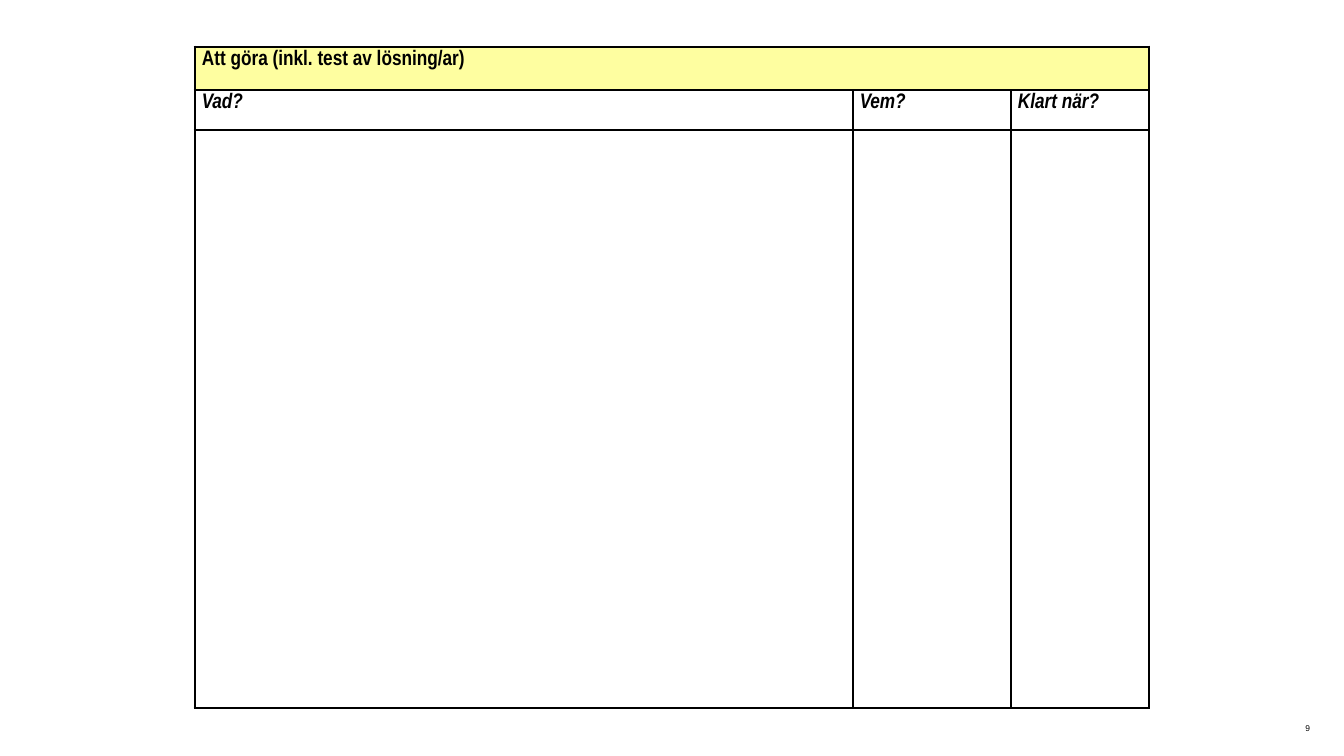
from lxml.etree import SubElement
from pptx import Presentation
from pptx.dml.color import RGBColor
from pptx.enum.text import PP_ALIGN
from pptx.oxml.ns import qn
from pptx.util import Pt

PX = 914400 / 100.8
SIZE = (1344, 756)
HEAD = "Att göra (inkl. test av lösning/ar)"
LABELS = ["Vad?", "Vem?", "Klart när?"]
COLS = [658, 158, 138]
ROWS = [43, 40, 578]
LEFT, TOP = 195, 47
NUM = ("9", (1243, 723, 67, 10))
BLACK, WHITE, CREAM = "000000", "FFFFFF", "FEFEA0"
THICK, THIN = 2.25, 1


def px(n):
    return round(n * PX)


def color(code):
    return RGBColor.from_string(code)


def style(font, name, size, bold=False, italic=False):
    font.name, font.size = name, Pt(size)
    font.bold, font.italic = bold, italic
    font.color.rgb = color(BLACK)


def border(cell, side, width):
    props = cell._tc.get_or_add_tcPr()
    line = SubElement(props, qn("a:ln" + side), w=str(Pt(width)))
    fill = SubElement(line, qn("a:solidFill"))
    SubElement(fill, qn("a:srgbClr"), val=BLACK)


def add_plan(slide):
    frame = slide.shapes.add_table(len(ROWS), len(COLS), px(LEFT), px(TOP),
                                   px(sum(COLS)), px(sum(ROWS)))
    table = frame.table
    table.first_row = table.horz_banding = False
    for col, width in zip(table.columns, COLS):
        col.width = px(width)
    for row, height in zip(table.rows, ROWS):
        row.height = px(height)
    texts = [[HEAD, "", ""], LABELS, ["", "", ""]]
    table.cell(0, 0).merge(table.cell(0, len(COLS) - 1))
    for r, line in enumerate(texts):
        for c, text in enumerate(line):
            cell = table.cell(r, c)
            cell.margin_left = cell.margin_right = px(7)
            cell.margin_top = cell.margin_bottom = px(3)
            outer = {"L": r == 0 or c == 0,
                     "R": r == 0 or c == len(COLS) - 1,
                     "T": r == 0,
                     "B": r == len(ROWS) - 1}
            for side, edge in outer.items():
                border(cell, side, THICK if edge else THIN)
            cell.fill.solid()
            cell.fill.fore_color.rgb = color(WHITE if r else CREAM)
            if text:
                cell.text_frame.text = text
                run = cell.text_frame.paragraphs[0].runs[0]
                style(run.font, "Arial Narrow", 15, True, r == 1)


def add_number(slide):
    text, place = NUM
    frame = slide.shapes.add_textbox(*map(px, place)).text_frame
    frame.margin_left = frame.margin_right = 0
    frame.margin_top = frame.margin_bottom = 0
    frame.word_wrap = True
    frame.text = text
    para = frame.paragraphs[0]
    para.alignment = PP_ALIGN.RIGHT
    style(para.runs[0].font, "Arial", 6)


def main():
    deck = Presentation()
    deck.slide_width, deck.slide_height = map(px, SIZE)
    slide = deck.slides.add_slide(deck.slide_layouts[6])
    add_number(slide)
    add_plan(slide)
    deck.save("out.pptx")


if __name__ == "__main__":
    main()
